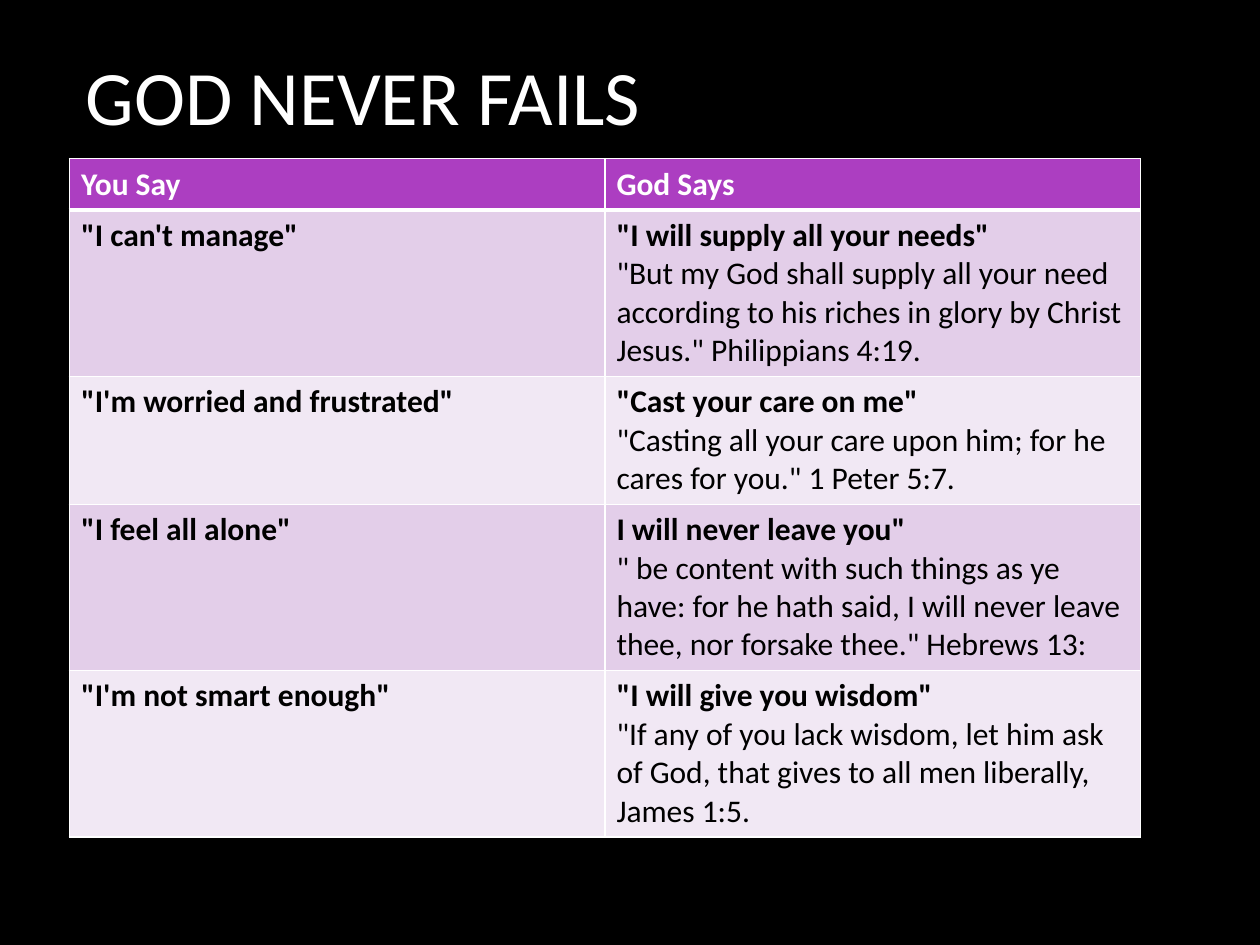
from typing import NamedTuple

from lxml.etree import SubElement
from pptx import Presentation
from pptx.dml.color import RGBColor as RGB
from pptx.enum.text import MSO_ANCHOR as ANCHOR, PP_ALIGN as ALIGN
from pptx.oxml.ns import qn
from pptx.util import Pt

COLORS = {
    "background": "000000",
    "header": "AC3EC1",
    "odd_row": "E3CEE9",
    "even_row": "F1E8F4",
    "light": "FFFFFF",
    "dark": "000000",
}
FONT = "Calibri"
ROW_HEIGHT = 29.2
COLUMN_WIDTH = 306


class Answer(NamedTuple):
    you_say: str
    god_says: str
    verse: str


ANSWERS = [
    Answer('"I can\'t manage"', '"I will supply all your needs"',
           '"But my God shall supply all your need according to his riches '
           'in glory by Christ Jesus." Philippians 4:19.'),
    Answer('"I\'m worried and frustrated"', '"Cast your care on me"',
           '"Casting all your care upon him; for he cares for you." 1 Peter 5:7.'),
    Answer('"I feel all alone"', 'I will never leave you"',
           '" be content with such things as ye have: for he hath said, '
           'I will never leave thee, nor forsake thee." Hebrews 13:'),
    Answer('"I\'m not smart enough"', '"I will give you wisdom"',
           '"If any of you lack wisdom, let him ask of God, that gives to all '
           'men liberally, James 1:5.'),
]


def color(name: str) -> RGB:
    return RGB.from_string(COLORS[name])


def add_run(p, text: str, size: float, color_name: str, bold: bool) -> None:
    r = p.add_run()
    r.text = text
    for attr, value in {"name": FONT, "size": Pt(size), "bold": bold}.items():
        setattr(r.font, attr, value)
    r.font.color.rgb = color(color_name)


def add_borders(cell, bottom: float, top: float) -> None:
    """Draw light lines around a cell, with widths in points."""
    tc_pr = cell._tc.get_or_add_tcPr()
    widths = {"lnL": 1, "lnR": 1, "lnT": top, "lnB": bottom}
    for side, width in widths.items():
        ln = SubElement(tc_pr, qn(f"a:{side}"), w=str(Pt(width)))
        fill = SubElement(ln, qn("a:solidFill"))
        SubElement(fill, qn("a:srgbClr"), val=COLORS["light"])


def fill_cell(cell, fill: str, text_color: str, heading: str, verse: str = "",
              top: float = 1, bottom: float = 1) -> None:
    margins = {"margin_left": 6.7, "margin_right": 6.7,
               "margin_top": 3.6, "margin_bottom": 3.6}
    for attr, value in margins.items():
        setattr(cell, attr, Pt(value))
    add_borders(cell, bottom, top)
    cell.fill.solid()
    cell.fill.fore_color.rgb = color(fill)
    p = cell.text_frame.paragraphs[0]
    add_run(p, heading, 18, text_color, True)
    if verse:
        p.add_line_break()
        add_run(p, verse, 18, text_color, False)


def add_title(s, text: str) -> None:
    title = s.shapes.title
    box = {"left": 41.8, "top": 18, "width": 612, "height": 72.7}
    for attr, value in box.items():
        setattr(title, attr, Pt(value))
    tf = title.text_frame
    tf.vertical_anchor = ANCHOR.MIDDLE
    p = tf.paragraphs[0]
    p.alignment = ALIGN.LEFT
    add_run(p, text, 44, "light", False)


def add_answers(s, answers: list[Answer]) -> None:
    rows = len(answers) + 1
    table = s.shapes.add_table(rows, 2, Pt(39.6), Pt(90.7), Pt(2 * COLUMN_WIDTH),
                               Pt(rows * ROW_HEIGHT)).table
    for col, heading in enumerate(["You Say", "God Says"]):
        fill_cell(table.cell(0, col), "header", "light", heading, bottom=3)
    for row, answer in enumerate(answers, start=1):
        fill = "odd_row" if row % 2 else "even_row"
        top = 3 if row == 1 else 1
        fill_cell(table.cell(row, 0), fill, "dark", answer.you_say, top=top)
        fill_cell(table.cell(row, 1), fill, "dark", answer.god_says,
                  answer.verse, top=top)


def main() -> None:
    prs = Presentation()
    prs.slide_width, prs.slide_height = Pt(720), Pt(540)
    s = prs.slides.add_slide(prs.slide_layouts[5])
    s.background.fill.solid()
    s.background.fill.fore_color.rgb = color("background")
    add_title(s, "GOD NEVER FAILS")
    add_answers(s, ANSWERS)
    prs.save("out.pptx")


if __name__ == "__main__":
    main()
